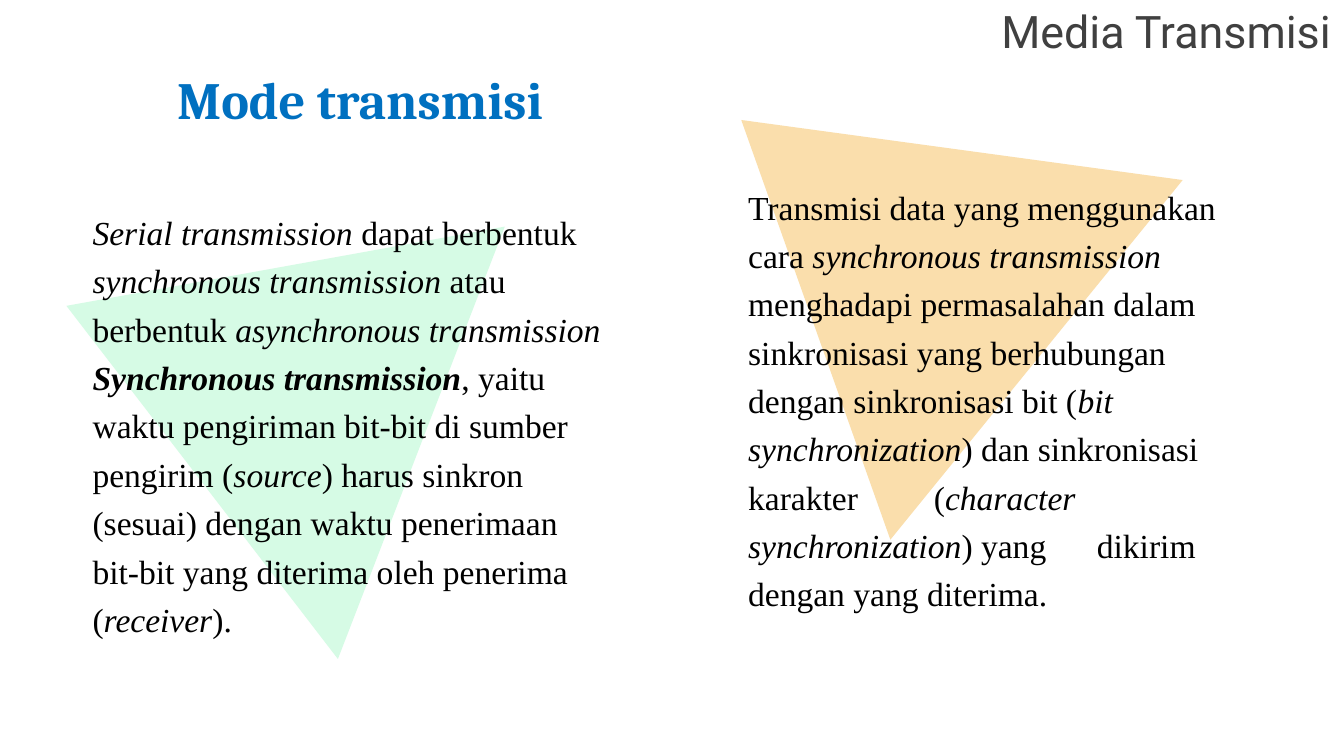
"""Build the slide on synchronous transmission modes."""
from lxml import etree
from pptx import Presentation
from pptx.dml.color import RGBColor
from pptx.enum.shapes import MSO_SHAPE
from pptx.enum.text import MSO_ANCHOR, PP_ALIGN
from pptx.oxml.ns import qn
from pptx.util import Cm, Pt

TRIANGLE = MSO_SHAPE.ISOSCELES_TRIANGLE
MIDDLE, TOP = MSO_ANCHOR.MIDDLE, MSO_ANCHOR.TOP
LEFT, RIGHT = PP_ALIGN.LEFT, PP_ALIGN.RIGHT
ORANGE = RGBColor(0xFA, 0xDE, 0xAC)
GREEN = RGBColor(0xD6, 0xFB, 0xE5)
GREY = RGBColor(0x40, 0x40, 0x40)
BLUE = RGBColor(0x00, 0x70, 0xC0)
BLACK = RGBColor(0x00, 0x00, 0x00)

PLAIN = {"italic": False, "bold": False}
ITALIC = {"italic": True, "bold": False}
STRONG = {"italic": True, "bold": True}
BOLD = {"italic": False, "bold": True}
HEADER = {"name": "Roboto", "size": Pt(24)}
TITLE = {"name": "Cambria", "size": Pt(28)}
BODY = {"name": "Times New Roman", "size": Pt(18)}


def add_text(page, place, spans, font, color, wrap=True, anchor=TOP, align=LEFT, spacing=1.0):
    box = page.shapes.add_textbox(*[Cm(length) for length in place])
    frame = box.text_frame
    frame.word_wrap = wrap
    frame.vertical_anchor = anchor
    para = frame.paragraphs[0]
    para.alignment = align
    para.line_spacing = spacing
    for text, style in spans:
        span = para.add_run()
        span.text = text
        for key, value in {**font, **style}.items():
            setattr(span.font, key, value)
        span.font.color.rgb = color
    return para


deck = Presentation()
deck.slide_width, deck.slide_height = Cm(25.4), Cm(14.29)
page = deck.slides.add_slide(deck.slide_layouts[6])

for left, top, angle, color in [(12.42, 0.94, 309.1, ORANGE), (0.23, 3.48, 291.1, GREEN)]:
    triangle = page.shapes.add_shape(TRIANGLE, Cm(left), Cm(top), Cm(8.76), Cm(7.19))
    triangle.rotation = angle
    triangle.shadow.inherit = False
    triangle.fill.solid()
    triangle.fill.fore_color.rgb = color
    triangle.line.fill.background()

add_text(page, (0, 0.28, 25.4, 0.61), [("Media Transmisi", PLAIN)], HEADER, GREY,
         anchor=MIDDLE, align=RIGHT)
add_text(page, (3.1, 1.14, 7.65, 1.45), [("Mode transmisi", BOLD)], TITLE, BLUE, wrap=False)

serial = [
    ("Serial transmission ", ITALIC),
    ("dapat berbentuk ", PLAIN),
    ("synchronous transmission ", ITALIC),
    ("atau berbentuk ", PLAIN),
    ("asynchronous transmission ", ITALIC),
    ("Synchronous transmission", STRONG),
    (", yaitu waktu pengiriman bit-bit di sumber pengirim (", PLAIN),
    ("source", ITALIC),
    (") harus sinkron (sesuai) dengan waktu penerimaan bit-bit yang diterima oleh penerima (", PLAIN),
    ("receiver", ITALIC),
    (").", PLAIN),
]
problems = [
    ("Transmisi data yang menggunakan cara ", PLAIN),
    ("synchronous transmission ", ITALIC),
    ("menghadapi permasalahan dalam sinkronisasi yang berhubungan dengan sinkronisasi bit (", PLAIN),
    ("bit synchronization", ITALIC),
    (") dan sinkronisasi karakter\t(", PLAIN),
    ("character synchronization", ITALIC),
    (") yang\tdikirim dengan yang diterima.", PLAIN),
]
add_text(page, (1.5, 3.73, 10.21, 7.65), serial, BODY, BLACK, spacing=1.2)
para = add_text(page, (13.89, 3.25, 10.21, 7.65), problems, BODY, BLACK, spacing=1.2)
tabs = etree.SubElement(para._p.get_or_add_pPr(), qn("a:tabLst"))
for stop in (3.51, 6.59):
    etree.SubElement(tabs, qn("a:tab"), pos=str(Cm(stop)), algn="l")

deck.save("out.pptx")
